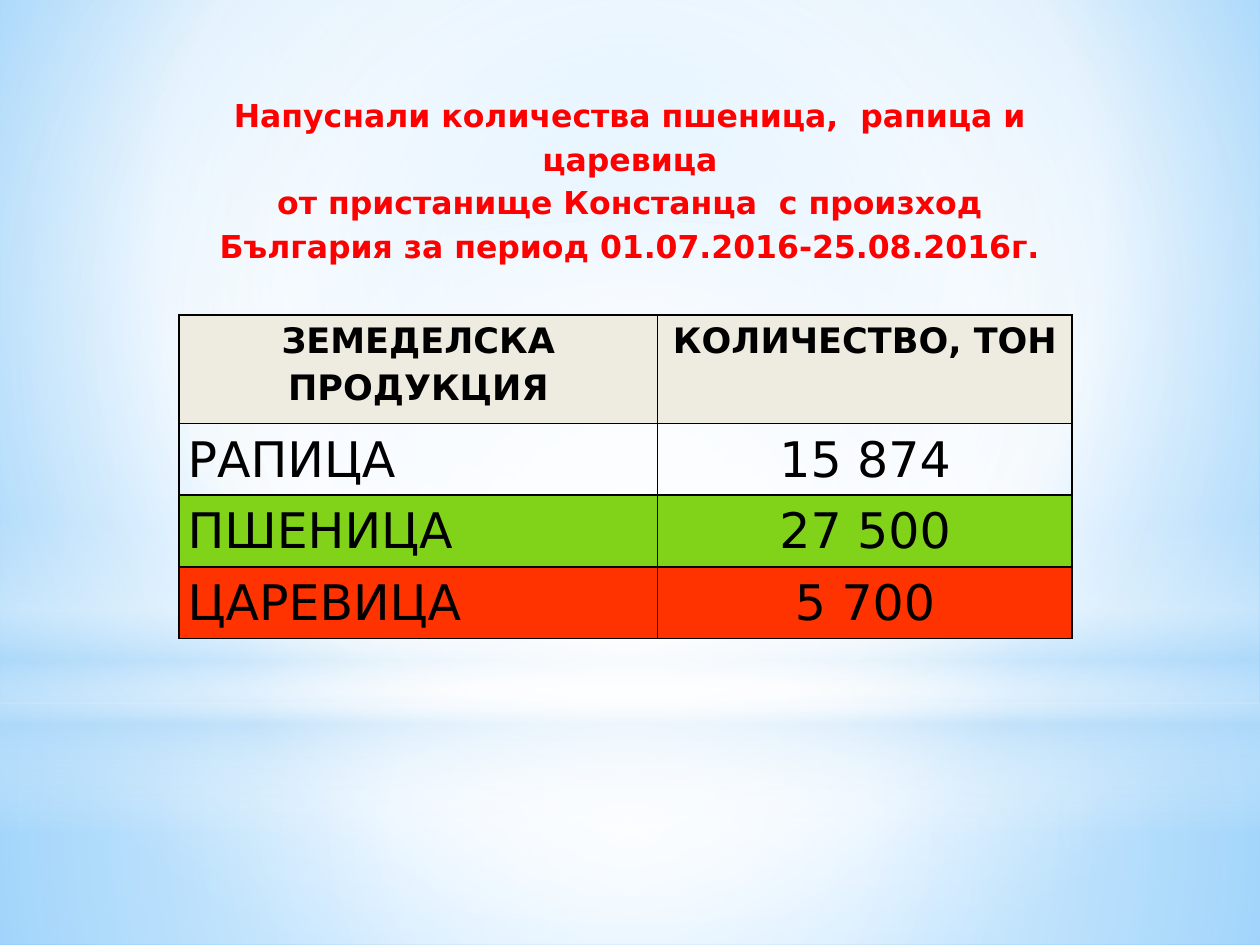
from lxml import etree
from pptx import Presentation
from pptx import util as u
from pptx.dml.color import RGBColor
from pptx.enum import shapes, text
from pptx.oxml.ns import qn

FONT = "DejaVu Sans"
COLORS = {
    "title": "FF0000", "ink": "000000", "header": "EEECE1",
    "green": "81D31A", "red": "FF3300",
    "white": "FFFFFF", "pale": "B4DCFA", "sky": "9ED5FF", "blue": "5BB9FF",
}
CENTER = (50, 50, 50, 50)


def color(name):
    return RGBColor.from_string(COLORS[name])


def paint_gradient(fill, element, stops, focus=None, angle=0):
    """Give the element a gradient of (position, color, opacity) stops in percent."""
    fill.solid()
    solid = next(element.iter(qn("a:solidFill")))
    gradient = etree.Element(qn("a:gradFill"), rotWithShape="1")
    stop_list = etree.SubElement(gradient, qn("a:gsLst"))
    for position, name, opacity in stops:
        stop = etree.SubElement(stop_list, qn("a:gs"), pos=str(position * 1000))
        tint = etree.SubElement(stop, qn("a:srgbClr"), val=COLORS[name])
        if opacity < 100:
            etree.SubElement(tint, qn("a:alpha"), val=str(opacity * 1000))
    if focus:
        path = etree.SubElement(gradient, qn("a:path"), path="circle")
        sides = {side: str(value * 1000) for side, value in zip("ltrb", focus)}
        etree.SubElement(path, qn("a:fillToRect"), **sides)
    else:
        etree.SubElement(gradient, qn("a:lin"), ang=str(angle * 60000), scaled="0")
    solid.getparent().replace(solid, gradient)


def write(paragraph, content, size, ink="ink", bold=False, align=text.PP_ALIGN.CENTER):
    paragraph.alignment = align
    paragraph.line_spacing = 1.15
    run = paragraph.add_run()
    run.text = content
    run.font.name = FONT
    run.font.size = u.Pt(size)
    run.font.bold = bold
    run.font.color.rgb = color(ink)


def add_backdrop(slide, width):
    """Sky gradient with four translucent layers of light."""
    paint_gradient(slide.background.fill, slide.element,
                   [(0, "sky", 100), (60, "white", 100), (100, "blue", 100)],
                   focus=(20, 10, 20, 60))
    rectangle, oval = shapes.MSO_SHAPE.RECTANGLE, shapes.MSO_SHAPE.OVAL
    layers = [
        # floor
        (rectangle, 5.58, 1.92, CENTER,
         [(0, "white", 91), (37, "white", 76), (100, "pale", 79)]),
        # sky
        (rectangle, 0, 5.58, CENTER,
         [(0, "white", 89), (48, "white", 62), (100, "pale", 79)]),
        # horizon
        (rectangle, 4.12, 2.5, None,
         [(0, "white", 0), (29, "white", 30), (45, "pale", 40),
          (55, "white", 26), (65, "pale", 60), (100, "white", 0)]),
        # glow
        (oval, 1.75, 5.58, CENTER, [(0, "white", 100), (56, "white", 0)]),
    ]
    for kind, top, height, focus, stops in layers:
        shape = slide.shapes.add_shape(kind, 0, u.Inches(top), width, u.Inches(height))
        shape.shadow.inherit = False
        shape.line.fill.background()
        paint_gradient(shape.fill, shape.element, stops, focus, angle=90)


def add_title(slide, left, top, width, height, lines):
    frame = slide.shapes.add_textbox(left, top, width, height).text_frame
    frame.word_wrap = True
    frame.auto_size = text.MSO_AUTO_SIZE.SHAPE_TO_FIT_TEXT
    for index, line in enumerate(lines):
        paragraph = frame.add_paragraph() if index else frame.paragraphs[0]
        write(paragraph, line, 18, ink="title", bold=True)


def add_borders(cell):
    properties = cell._tc.get_or_add_tcPr()
    for index, side in enumerate(("lnL", "lnR", "lnT", "lnB")):
        line = etree.Element(qn(f"a:{side}"), w=str(u.Pt(1)))
        solid = etree.SubElement(line, qn("a:solidFill"))
        etree.SubElement(solid, qn("a:srgbClr"), val=COLORS["ink"])
        properties.insert(index, line)


def add_quantity_table(slide, left, top, column_widths, row_heights, rows):
    table = slide.shapes.add_table(len(rows), len(column_widths), left, top,
                                   sum(column_widths), sum(row_heights)).table
    table.first_row = table.horz_banding = False
    for column, width in zip(table.columns, column_widths):
        column.width = width
    for row_index, (fill, *values) in enumerate(rows):
        table.rows[row_index].height = row_heights[row_index]
        header = row_index == 0
        for column_index, value in enumerate(values):
            cell = table.cell(row_index, column_index)
            cell.margin_left = cell.margin_right = u.Inches(0.07)
            cell.margin_top = cell.margin_bottom = 0
            if fill:
                cell.fill.solid()
                cell.fill.fore_color.rgb = color(fill)
            else:
                cell.fill.background()
            add_borders(cell)
            centered = header or column_index > 0
            write(cell.text_frame.paragraphs[0], value, 20 if header else 28, bold=header,
                  align=text.PP_ALIGN.CENTER if centered else text.PP_ALIGN.LEFT)


def main():
    presentation = Presentation()
    presentation.slide_width, presentation.slide_height = u.Inches(10), u.Inches(7.5)
    slide = presentation.slides.add_slide(presentation.slide_layouts[6])

    add_backdrop(slide, presentation.slide_width)
    add_quantity_table(
        slide, u.Inches(1.42), u.Inches(2.5),
        column_widths=[u.Inches(3.8), u.Inches(3.29)],
        row_heights=[u.Inches(0.86)] + [u.Inches(0.57)] * 3,
        rows=[
            ("header", "ЗЕМЕДЕЛСКА ПРОДУКЦИЯ", "КОЛИЧЕСТВО, ТОН"),
            (None, "РАПИЦА", "15 874"),
            ("green", "ПШЕНИЦА", "27 500"),
            ("red", "ЦАРЕВИЦА", "5 700"),
        ])
    add_title(
        slide, u.Inches(1.5), u.Inches(0.67), u.Inches(7), u.Inches(1.49),
        ["Напуснали количества пшеница,  рапица и царевица",
         "от пристанище Констанца  с произход България за период 01.07.2016-25.08.2016г."])
    presentation.save("out.pptx")


if __name__ == "__main__":
    main()
